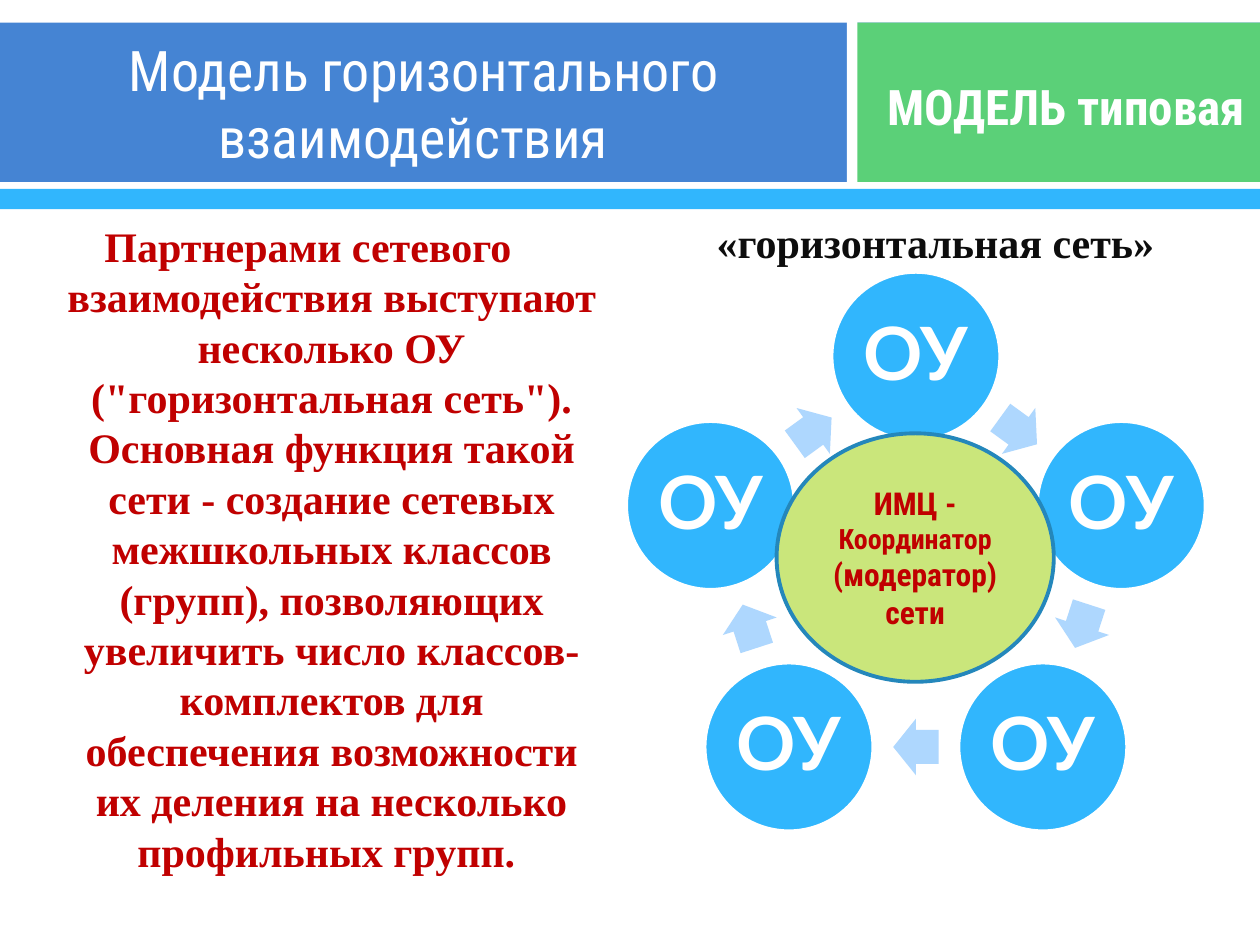
from math import cos, radians, sin

from pptx import Presentation
from pptx.dml.color import RGBColor
from pptx.enum.shapes import MSO_SHAPE
from pptx.enum.text import MSO_ANCHOR, MSO_AUTO_SIZE, PP_ALIGN
from pptx.util import Pt

BLUE, SKY, PALE = "4584D3", "31B6FD", "AED7FE"
GREEN, LIME, EDGE = "5BD078", "CAE67B", "2487BB"
RED, DARK, WHITE = "C00000", "0D0D0D", "FFFFFF"
ROBOTO, TIMES, LATO = "Roboto Condensed", "Times New Roman", "Lato"


def color(code):
    return RGBColor.from_string(code)


class Deck:
    """Draws styled elements on the current slide, with lengths in points."""

    def __init__(self, wide, high):
        self.show = Presentation()
        self.show.slide_width, self.show.slide_height = Pt(wide), Pt(high)
        self.slide = self.show.slides.add_slide(self.show.slide_layouts[5])

    def fill_text(self, shape, runs, font, ink, bold=True, anchor=MSO_ANCHOR.MIDDLE):
        frame = shape.text_frame
        frame.word_wrap = True
        frame.auto_size = MSO_AUTO_SIZE.NONE
        frame.vertical_anchor = anchor
        para = frame.paragraphs[0]
        para.alignment = PP_ALIGN.CENTER
        for text, size in runs:
            run = para.add_run()
            run.text = text
            run.font.name, run.font.size, run.font.bold = font, Pt(size), bold
            run.font.color.rgb = color(ink)
        return para

    def shape(self, kind, x, y, w, h, fill, line=None):
        item = self.slide.shapes.add_shape(kind, Pt(x), Pt(y), Pt(w), Pt(h))
        item.shadow.inherit = False
        item.fill.solid()
        item.fill.fore_color.rgb = color(fill)
        if line:
            item.line.color.rgb = color(line)
            item.line.width = Pt(2.22)
        else:
            item.line.fill.background()
        return item

    def bar(self, x, y, w, h, fill):
        self.shape(MSO_SHAPE.RECTANGLE, x, y, w, h, fill)

    def title(self, x, y, w, h, runs):
        item = self.slide.shapes.title
        item.left, item.top, item.width, item.height = Pt(x), Pt(y), Pt(w), Pt(h)
        self.fill_text(item, runs, ROBOTO, WHITE, bold=False)
        self.slide.shapes._spTree.append(item._element)

    def label(self, x, y, w, h, text, size):
        box = self.slide.shapes.add_textbox(Pt(x), Pt(y), Pt(w), Pt(h))
        self.fill_text(box, [(text, size)], ROBOTO, WHITE)

    def prose(self, x, y, w, h, text, ink):
        box = self.slide.shapes.add_textbox(Pt(x), Pt(y), Pt(w), Pt(h))
        para = self.fill_text(box, [(text, 24)], TIMES, ink, anchor=MSO_ANCHOR.TOP)
        para.line_spacing = Pt(28.8)
        props = para._p.get_or_add_pPr()
        props.set("marL", str(Pt(27)))
        props.set("indent", str(Pt(-27)))

    def node(self, x, y, size, text):
        item = self.shape(MSO_SHAPE.OVAL, x - size / 2, y - size / 2, size, size, SKY, WHITE)
        para = self.fill_text(item, [(text, 42)], LATO, WHITE)
        para.line_spacing = 0.9
        frame = item.text_frame
        frame.word_wrap = False
        frame.margin_left = frame.margin_right = Pt(0)

    def arrow(self, x, y, turn):
        w, h = 26, 32.4
        item = self.shape(MSO_SHAPE.RIGHT_ARROW, x - w / 2, y - h / 2, w, h, PALE)
        item.adjustments[0], item.adjustments[1] = 0.6, 0.5
        item.rotation = turn

    def ring(self, x, y, reach, count, text):
        step = 360 / count
        inner = reach * cos(radians(step / 2))
        for i in range(count):
            node, turn = radians(i * step), (i + 0.5) * step
            mid = radians(turn)
            self.node(x + reach * sin(node), y - reach * cos(node), 96.5, text)
            self.arrow(x + inner * sin(mid), y - inner * cos(mid), turn)

    def hub(self, x, y, w, h, runs):
        item = self.shape(MSO_SHAPE.OVAL, x, y, w, h, LIME, EDGE)
        self.fill_text(item, runs, ROBOTO, RED)


def main():
    deck = Deck(720, 540)
    deck.bar(0, 13, 720, 91, BLUE)
    deck.bar(0, 108, 720, 11.5, SKY)
    deck.bar(486, 13, 234, 91, GREEN)
    deck.bar(484, 11, 6, 96, WHITE)
    deck.title(0, 15, 480, 87, [(" ", 20), ("Модель горизонтального взаимодействия ", 32)])
    deck.label(492, 15, 228, 91, " МОДЕЛЬ типовая ", 28)
    deck.prose(0, 122.4, 352, 385, (
        "Партнерами сетевого взаимодействия выступают несколько ОУ "
        '("горизонтальная сеть"). Основная функция такой сети - создание '
        "сетевых межшкольных классов (групп), позволяющих увеличить число "
        "классов-комплектов для обеспечения возможности их деления на "
        "несколько профильных групп. "), RED)
    deck.prose(366, 120.4, 337, 37, "«горизонтальная сеть»", DARK)
    deck.ring(523.4, 327, 123.4, 5, "ОУ")
    deck.hub(443.8, 247.6, 158.4, 142, [
        ("ИМЦ - ", 18), ("Координатор ", 16), ("(модератор) сети", 18)])
    deck.show.save("out.pptx")


if __name__ == "__main__":
    main()
